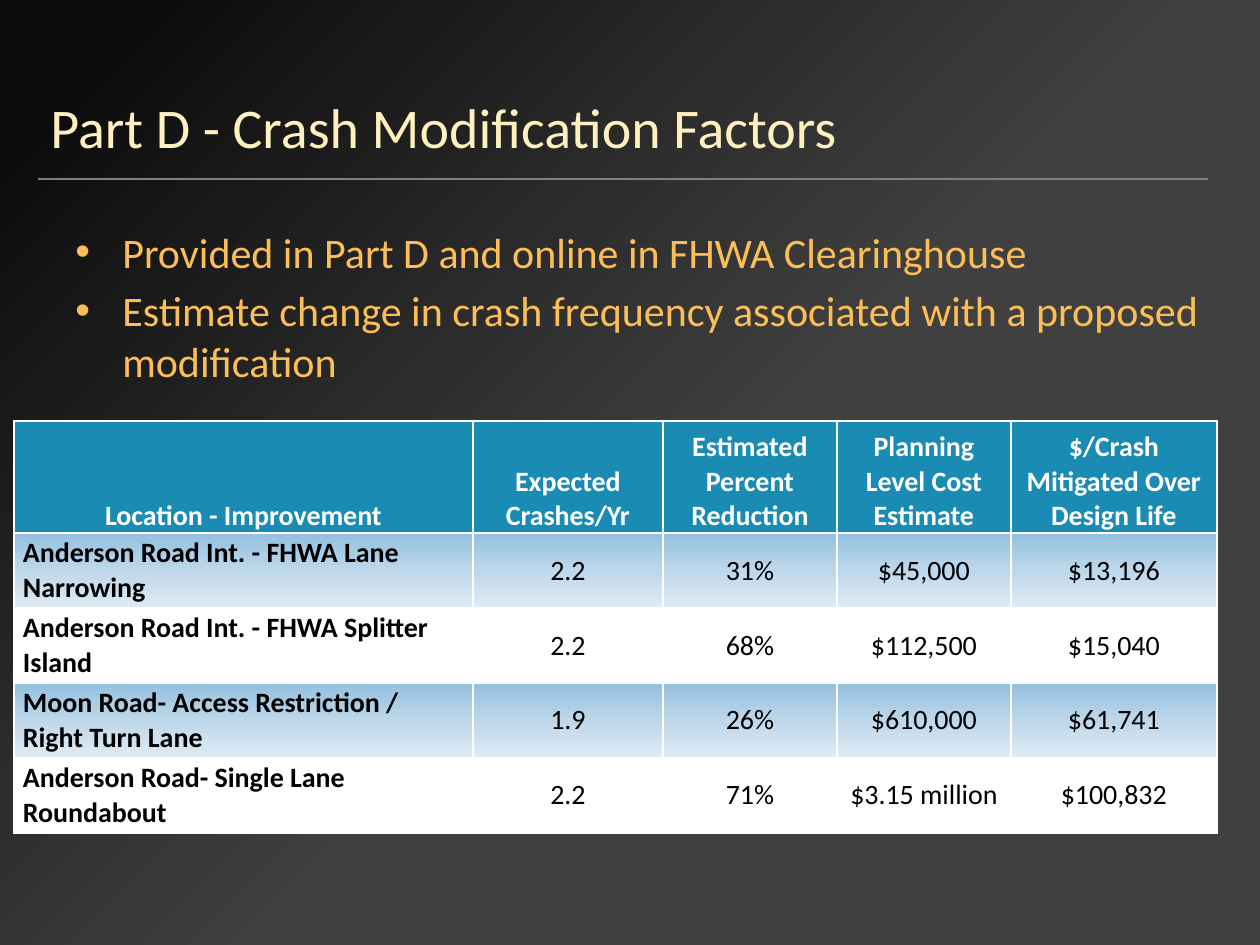
from lxml import etree
from pptx import Presentation
from pptx import util as u
from pptx.dml.color import RGBColor
from pptx.enum import shapes, text
from pptx.oxml.ns import nsdecls, qn
from pptx.oxml import parse_xml

SCALE = 914400 / 126
FONT = "Calibri"
HUES = {
    "title": "FFF0BD", "body": "FDBE57", "rule": "808080", "head": "1A8BB3",
    "white": "FFFFFF", "black": "000000",
}
BACK = [(7, "0D0D0D"), (55, "404040")]
BAND = [(0, "92C0E0"), (50, "BED7EA"), (100, "DFEBF4")]

POINTS = [
    "Provided in Part D and online in FHWA Clearinghouse",
    "Estimate change in crash frequency associated with a proposed modification",
]
COLS = [459, 190, 174, 174, 206]
ROWS = [112, 75, 75, 75, 75]
DATA = [
    ["Location - Improvement", "Expected Crashes/Yr", "Estimated Percent Reduction",
     "Planning Level Cost Estimate", "$/Crash Mitigated Over Design Life"],
    ["Anderson Road Int. - FHWA Lane Narrowing", "2.2", "31%", "$45,000", "$13,196"],
    ["Anderson Road Int. - FHWA Splitter Island", "2.2", "68%", "$112,500", "$15,040"],
    ["Moon Road- Access Restriction / Right Turn Lane", "1.9", "26%", "$610,000", "$61,741"],
    ["Anderson Road- Single Lane Roundabout", "2.2", "71%", "$3.15 million", "$100,832"],
]


def px(n):
    return u.Emu(round(n * SCALE))


def rgb(name):
    return RGBColor.from_string(HUES[name])


def put(obj, **vals):
    for key, val in vals.items():
        setattr(obj, key, val)


def style(para, size, hue, bold=False):
    put(para.font, name=FONT, size=u.Pt(size), bold=bold)
    para.font.color.rgb = rgb(hue)


def blend(fill, root, stops, angle):
    """Fill with a linear gradient of any number of stops."""
    fill.solid()
    old = root.find(".//" + qn("a:solidFill"))
    marks = "".join(
        f'<a:gs pos="{pos * 1000}"><a:srgbClr val="{hue}"/></a:gs>' for pos, hue in stops)
    new = parse_xml(
        f'<a:gradFill {nsdecls("a")} rotWithShape="1"><a:gsLst>{marks}</a:gsLst>'
        f'<a:lin ang="{angle * 60000}" scaled="0"/></a:gradFill>')
    old.getparent().replace(old, new)


def add_box(slide, left, top, wide, high, anchor):
    box = slide.shapes.add_textbox(px(left), px(top), px(wide), px(high))
    put(box.text_frame, word_wrap=True, vertical_anchor=anchor)
    return box.text_frame


def add_title(slide):
    frame = add_box(slide, 38, 74, 1158, 105, text.MSO_ANCHOR.MIDDLE)
    frame.text = "Part D - Crash Modification Factors"
    style(frame.paragraphs[0], 32, "title")


def add_list(slide):
    frame = add_box(slide, 63, 220, 1148, 266, text.MSO_ANCHOR.TOP)
    frame.text = "\n".join(POINTS)
    for i, para in enumerate(frame.paragraphs):
        props = para._p.get_or_add_pPr()
        props.set("marL", str(px(47)))
        props.set("indent", str(px(-47)))
        etree.SubElement(props, qn("a:buFont")).set("typeface", "Arial")
        etree.SubElement(props, qn("a:buChar")).set("char", "•")
        style(para, 24, "body")
        if i:
            para.space_before = u.Pt(4.8)


def add_rule(slide, left):
    line = slide.shapes.add_connector(
        shapes.MSO_CONNECTOR.STRAIGHT, px(left), px(179), px(left + 1169), px(179))
    line.line.color.rgb = rgb("rule")
    line.line.width = u.Pt(0.75)
    etree.SubElement(line._element.spPr, qn("a:effectLst"))


def edge(cell):
    props = cell._tc.get_or_add_tcPr()
    for side in "LRTB":
        props.append(parse_xml(
            f'<a:ln{side} {nsdecls("a")} w="12700"><a:solidFill>'
            f'<a:srgbClr val="{HUES["white"]}"/></a:solidFill></a:ln{side}>'))


def fill_cell(cell, words, row, col):
    head = row == 0
    cell.text = words
    para = cell.text_frame.paragraphs[0]
    style(para, 16, "white" if head else "black", head or col == 0)
    if head or col:
        para.alignment = text.PP_ALIGN.CENTER
    if head:
        para.space_after = u.Pt(2)
    put(cell, margin_left=px(9), margin_right=px(9), margin_top=0, margin_bottom=0,
        vertical_anchor=text.MSO_ANCHOR.BOTTOM if head else text.MSO_ANCHOR.MIDDLE)
    if row % 2:
        blend(cell.fill, cell._tc.tcPr, BAND, 90)
    else:
        cell.fill.solid()
        cell.fill.fore_color.rgb = rgb("head" if head else "white")
    paint = cell._tc.tcPr[-1]
    edge(cell)
    cell._tc.tcPr.append(paint)


def add_grid(slide):
    grid = slide.shapes.add_table(
        len(ROWS), len(COLS), px(14), px(421), px(sum(COLS)), px(sum(ROWS))).table
    for col, wide in zip(grid.columns, COLS):
        col.width = px(wide)
    for r, (row, high) in enumerate(zip(grid.rows, ROWS)):
        row.height = px(high)
        for c, words in enumerate(DATA[r]):
            fill_cell(grid.cell(r, c), words, r, c)


def main():
    deck = Presentation()
    put(deck, slide_width=px(1260), slide_height=px(945))
    slide = deck.slides.add_slide(deck.slide_layouts[6])
    blend(slide.background.fill, slide.element, BACK, 45)
    for left in (39, 38):
        add_rule(slide, left)
    add_list(slide)
    add_grid(slide)
    add_title(slide)
    deck.save("out.pptx")


if __name__ == "__main__":
    main()
